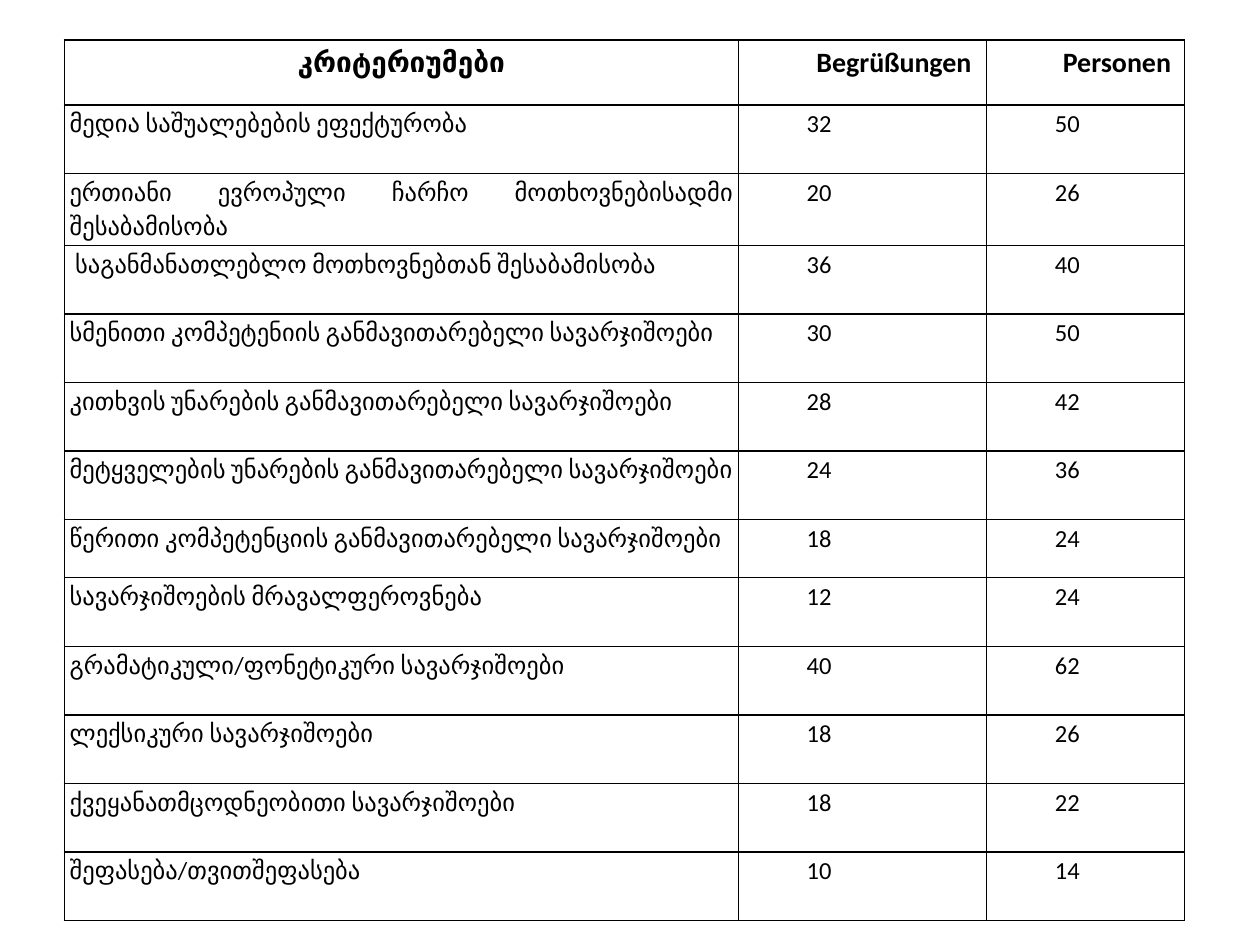
"""Build a slide with a table that scores two textbooks by criterion."""
from lxml.etree import SubElement
from pptx import Presentation
from pptx.dml.color import RGBColor
from pptx.enum.text import PP_ALIGN
from pptx.oxml.ns import qn
from pptx.util import Pt

BLACK = RGBColor(0, 0, 0)
WIDTHS = [385.2, 141.8, 113]
TALL = 39.2
HEIGHTS = [37, TALL, 41] + [TALL] * 4 + [33.3] + [TALL] * 5
ROWS = [
    ("კრიტერიუმები", "Begrüßungen", "Personen"),
    ("მედია საშუალებების ეფექტურობა", 32, 50),
    ("ერთიანი ევროპული ჩარჩო მოთხოვნებისადმი შესაბამისობა", 20, 26),
    (" საგანმანათლებლო მოთხოვნებთან შესაბამისობა", 36, 40),
    ("სმენითი კომპეტენიის განმავითარებელი სავარჯიშოები", 30, 50),
    ("კითხვის უნარების განმავითარებელი სავარჯიშოები", 28, 42),
    ("მეტყველების უნარების განმავითარებელი სავარჯიშოები", 24, 36),
    ("წერითი კომპეტენციის განმავითარებელი სავარჯიშოები", 18, 24),
    ("სავარჯიშოების მრავალფეროვნება", 12, 24),
    ("გრამატიკული/ფონეტიკური სავარჯიშოები", 40, 62),
    ("ლექსიკური სავარჯიშოები", 18, 26),
    ("ქვეყანათმცოდნეობითი სავარჯიშოები", 18, 22),
    ("შეფასება/თვითშეფასება", 10, 14),
]
HEAD = {"size": Pt(16), "bold": True, "name": "Calibri"}
BODY = {"size": Pt(14), "bold": False, "name": "Calibri"}
INSETS = {"margin_left": Pt(3), "margin_right": Pt(3), "margin_top": 0, "margin_bottom": 0}


def apply(item, values):
    for name, value in values.items():
        setattr(item, name, value)


def border(cell):
    for side in ("lnL", "lnR", "lnT", "lnB"):
        line = SubElement(cell._tc.get_or_add_tcPr(), qn(f"a:{side}"), w=str(Pt(1)))
        fill = SubElement(line, qn("a:solidFill"))
        SubElement(fill, qn("a:srgbClr"), val=str(BLACK))


deck = Presentation()
deck.slide_width, deck.slide_height = Pt(720), Pt(540)
slide = deck.slides.add_slide(deck.slide_layouts[6])
frame = slide.shapes.add_table(
    len(ROWS), len(WIDTHS), Pt(36.8), Pt(23), Pt(sum(WIDTHS)), Pt(sum(HEIGHTS))
)
table = frame.table
apply(table, {"first_row": False, "horz_banding": False})
for column, width in zip(table.columns, WIDTHS):
    column.width = Pt(width)
for row, height in zip(table.rows, HEIGHTS):
    row.height = Pt(height)

for r, values in enumerate(ROWS):
    for c, value in enumerate(values):
        cell = table.cell(r, c)
        border(cell)
        cell.fill.background()
        apply(cell, INSETS)
        para = cell.text_frame.paragraphs[0]
        para.alignment = PP_ALIGN.JUSTIFY if r else PP_ALIGN.CENTER
        para.line_spacing = 1.15
        if c:
            para._p.get_or_add_pPr().set("marL", str(Pt(36)))
        run = para.add_run()
        run.text = str(value)
        apply(run.font, BODY if r else HEAD)
        run.font.color.rgb = BLACK

deck.save("out.pptx")
